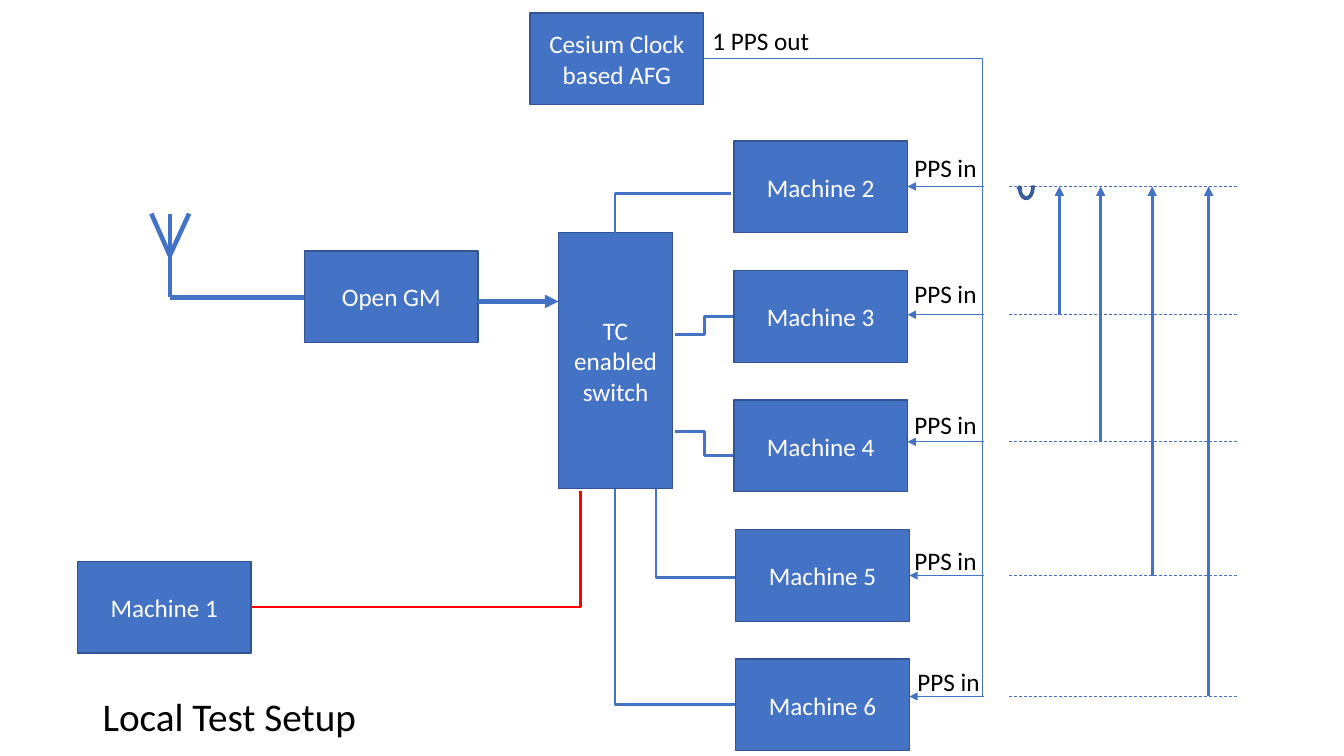
from lxml import etree
from pptx import Presentation
from pptx.dml.color import RGBColor
from pptx.enum.dml import MSO_LINE as Dash
from pptx.enum.shapes import MSO_CONNECTOR as Wire, MSO_SHAPE as Form
from pptx.enum.text import MSO_ANCHOR as Anchor, PP_ALIGN as Align
from pptx.oxml.ns import qn
from pptx.util import Pt

BLUE, EDGE, RED = "4472C4", "325491", "FF0000"
WHITE, BLACK = "FFFFFF", "000000"
NODE = (124, 65.5)
PULSES = (133.2, 224.8, 315.6, 411.1, 497.5)


def tint(code):
    return RGBColor.from_string(code)


def style(shape):
    shape.shadow.inherit = False
    shape.fill.solid()
    shape.fill.fore_color.rgb = tint(BLUE)
    shape.line.color.rgb = tint(EDGE)
    shape.line.width = Pt(1)


def write(shape, text, size, color):
    par = shape.text_frame.paragraphs[0]
    par.text = text
    par.font.size = Pt(size)
    par.font.name = "Calibri"
    par.font.color.rgb = tint(color)
    return par


def node(shapes, box, text):
    """Blue box with a centred name."""
    shape = shapes.add_shape(Form.RECTANGLE, *map(Pt, box))
    style(shape)
    shape.text_frame.word_wrap = True
    shape.text_frame.vertical_anchor = Anchor.MIDDLE
    write(shape, text, 18, WHITE).alignment = Align.CENTER


def label(shapes, box, text, size=18):
    shape = shapes.add_textbox(*map(Pt, box))
    shape.text_frame.word_wrap = True
    return write(shape, text, size, BLACK)


def link(shapes, start, end, width, color=BLUE, bend=None, arrow=False, dash=False):
    """Line from start to end; bend is where an elbow turns, 0 to 1 across."""
    kind = Wire.STRAIGHT if bend is None else Wire.ELBOW
    line = shapes.add_connector(kind, *map(Pt, (*start, *end)))
    line.line.color.rgb = tint(color)
    line.line.width = Pt(width)
    if dash:
        line.line.dash_style = Dash.DASH
    props = line._element.spPr
    if bend is not None:
        guides = props.find(qn("a:prstGeom")).get_or_add_avLst()
        etree.SubElement(guides, qn("a:gd"), name="adj1", fmla=f"val {round(bend * 100000)}")
    if arrow:
        etree.SubElement(props.find(qn("a:ln")), qn("a:tailEnd"), type="triangle")
    etree.SubElement(props, qn("a:effectLst"))


def antenna(shapes, x, y, w, h):
    """Aerial with its fork at the left and its feed along the bottom."""
    mast, fork = x + 13.2, y + h / 2
    for tip in (x, mast, x + 27):
        link(shapes, (tip, y), (mast, fork), 3.25)
    link(shapes, (mast, fork), (mast, y + h), 3.25)
    link(shapes, (x + w, y + h), (mast, y + h), 3.25)


def source(shapes, x, y):
    """Time source and its arrow to the switch."""
    antenna(shapes, x - 109.4, y - 26.7, 109.4, 59.8)
    node(shapes, (x, y, *NODE), "Open GM")
    link(shapes, (x + NODE[0], y + 36), (x + 181.5, y + 36), 3.25, arrow=True)


def switch(shapes, x, y, w, h):
    """Switch with its wires to the machines."""
    node(shapes, (x, y, w, h), "TC enabled switch")
    mid, foot, side = x + 40.2, y + h, x + w + 2
    wires = (
        ((mid, y), (x + 123, y - 28), 0),
        ((side, y + 72.7), (x + 125, y + 59.8), 0.5),
        ((side, y + 142), (x + 125, y + 159), 0.5),
        ((x + 69.7, foot), (x + 126.5, foot + 63.4), 0),
        ((mid, foot), (x + 126.5, foot + 154), 0),
    )
    for start, end, bend in wires:
        link(shapes, start, end, 1.75, bend=bend)


def tester(shapes, x, y):
    """First machine and its red wire to the switch."""
    node(shapes, (x, y, *NODE), "Machine 1")
    link(shapes, (x + NODE[0], y + 32.5), (x + 359.3, y - 50.2), 1.75, RED, bend=1)


def clock(shapes, x, y):
    """Reference clock and the bus it drives."""
    node(shapes, (x, y, *NODE), "Cesium Clock based AFG")
    link(shapes, (x + NODE[0], y + 32.5), (x + 323.3, PULSES[-1]), 0.5, bend=1)
    label(shapes, (x + 123.1, y + 5, 91.5, 29), "1 PPS out")


def machines(shapes, x, y):
    """Column of machines, each fed by a pulse from the bus."""
    tops = (105.1, 195.1, 288.7, 385.9, 472.3)
    shifts = (0, 0, 0, 1.4, 1.4)
    for i, (pulse, top, shift) in enumerate(zip(PULSES, tops, shifts)):
        left = x + shift
        node(shapes, (left, y + 92.5 * i, *NODE), f"Machine {i + 2}")
        link(shapes, (x + 178.5, pulse), (left + NODE[0], pulse), 0.5, arrow=True)
        inset = 2.2 if i == 4 else 0
        label(shapes, (x + 121.8 + inset, top, 62.6, 29), "PPS in")


def delays(shapes, x, w):
    """Dashed pulse levels with arrows back to the first one."""
    first = PULSES[0]
    for pulse in PULSES:
        link(shapes, (x, pulse), (x + w, pulse), 0.5, dash=True)
    for pulse, gap in zip(PULSES[1:], (36, 65.5, 102.3, 142.6)):
        link(shapes, (x + gap, pulse), (x + gap, first), 2.25, arrow=True)
    loop = shapes.add_shape(Form.CIRCULAR_ARROW, *map(Pt, (x + 5.8, first - 10.8, 13, 20.9)))
    style(loop)
    loop.rotation = 180


def main():
    deck = Presentation()
    deck.slide_width, deck.slide_height = Pt(960), Pt(540)
    shapes = deck.slides.add_slide(deck.slide_layouts[6]).shapes
    label(shapes, (66.2, 494.6, 300, 40), "Local Test Setup", 28).line_spacing = 0.9
    source(shapes, 217.5, 179.3)
    switch(shapes, 399, 166.3, 81.4, 182.9)
    machines(shapes, 524.2, 100.8)
    clock(shapes, 378.7, 9.3)
    tester(shapes, 55.4, 401)
    delays(shapes, 720.7, 164.2)
    deck.save("out.pptx")


if __name__ == "__main__":
    main()
